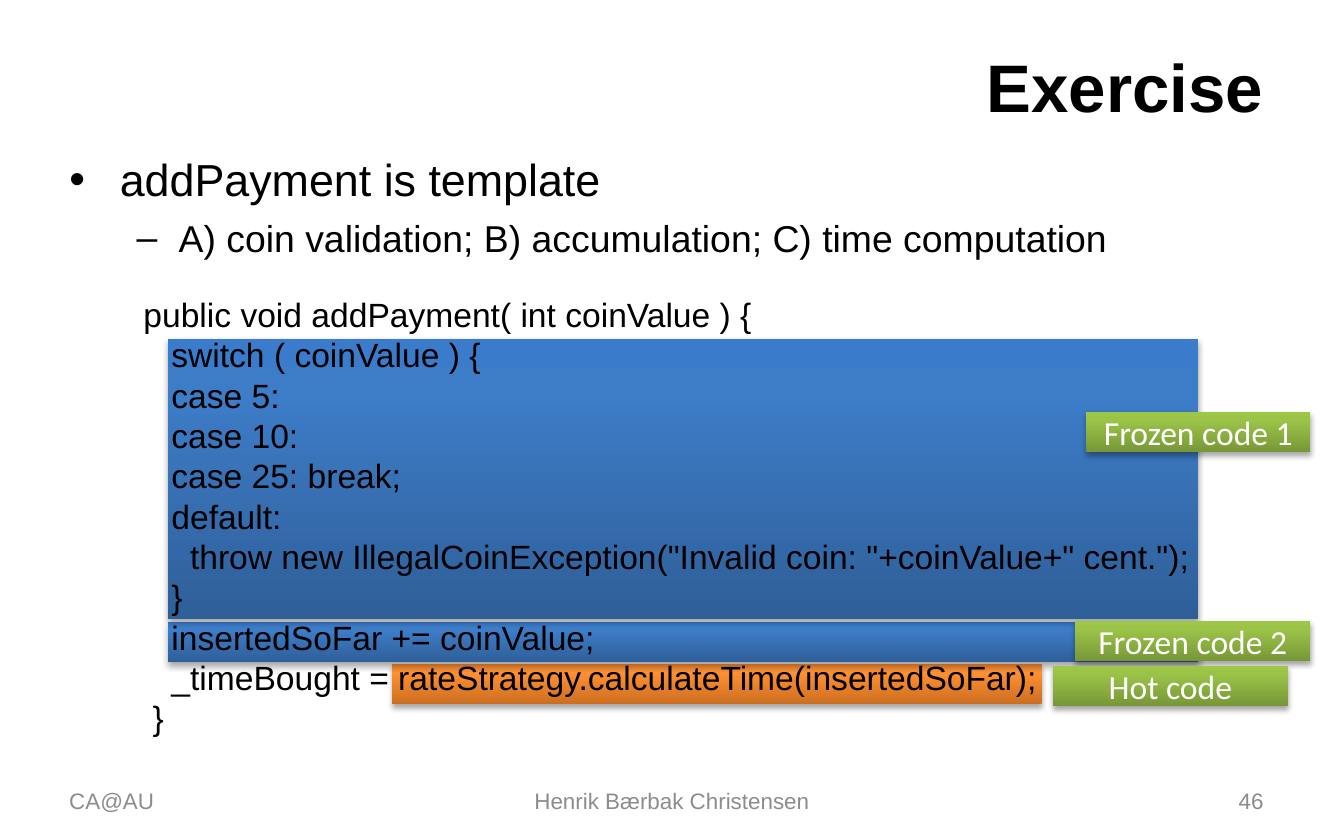
"""Build the exercise slide that marks frozen and hot code in addPayment."""
from copy import deepcopy
from dataclasses import dataclass
from typing import Any

from lxml.etree import SubElement
from pptx import Presentation
from pptx.dml.color import RGBColor
from pptx.enum.shapes import MSO_SHAPE as Shape
from pptx.enum.text import MSO_ANCHOR as Anchor, MSO_AUTO_SIZE as AutoSize, PP_ALIGN as Align
from pptx.oxml.ns import qn
from pptx.util import Pt

COLORS = {"text": "000000", "footer": "8C8C8C", "label": "FFFFFF", "shadow": "000000"}
GRADIENTS = {
    "frozen": ("2F5F99", "3D7CC7", "3A7CCB"),
    "hot": ("CC6E20", "FF9034", "FF9136"),
    "label": ("779737", "9BC348", "9DC746"),
}
STOPS = (0, 0.8, 1)
FORMATS = {
    "title": {"name": "Arial", "size": Pt(36), "bold": True},
    "bullet": {"name": "Arial", "size": Pt(24)},
    "subbullet": {"name": "Arial", "size": Pt(20)},
    "code": {"name": "Arial", "size": Pt(18)},
    "footer": {"name": "Arial", "size": Pt(12)},
    "label": {"name": "Calibri", "size": Pt(18)},
}
BAR_HEIGHT = 21.6
CODE = """ public void addPayment( int coinValue ) {
    switch ( coinValue ) {
    case 5:
    case 10:
    case 25: break;
    default:
      throw new IllegalCoinException("Invalid coin: "+coinValue+" cent.");
    }
    insertedSoFar += coinValue;
    _timeBought = rateStrategy.calculateTime(insertedSoFar);
  }"""


def set_values(target, values):
    for name, value in values.items():
        setattr(target, name, value)


@dataclass
class SlideBuilder:
    slide: Any

    def place(self, shape, box):
        set_values(shape, dict(zip(("left", "top", "width", "height"), map(Pt, box))))

    def format(self, paragraph, style, **layout):
        set_values(paragraph, layout)
        for run in paragraph.runs:
            set_values(run.font, FORMATS[style])
            run.font.color.rgb = RGBColor.from_string(COLORS.get(style, COLORS["text"]))

    def title(self, text, box):
        shape = self.slide.shapes.title
        self.place(shape, box)
        set_values(shape.text_frame, {"text": text, "vertical_anchor": Anchor.MIDDLE,
                                      "auto_size": AutoSize.NONE})
        self.format(shape.text_frame.paragraphs[0], "title", alignment=Align.RIGHT)

    def bullets(self, items, box):
        shape = self.slide.placeholders[1]
        self.place(shape, box)
        frame = shape.text_frame
        set_values(frame, {"text": "\n".join(text for text, *_ in items),
                           "auto_size": AutoSize.NONE, "margin_top": Pt(6.5)})
        for paragraph, (_, style, level, margin, hanging, before) in zip(frame.paragraphs, items):
            properties = paragraph._p.get_or_add_pPr()
            properties.set("marL", str(Pt(margin)))
            properties.set("indent", str(-Pt(hanging)))
            self.format(paragraph, style, level=level, space_before=Pt(before))

    def text(self, text, style, box, anchor=Anchor.TOP, **layout):
        shape = self.slide.shapes.add_textbox(*map(Pt, box))
        set_values(shape.text_frame, {"text": text, "word_wrap": True, "vertical_anchor": anchor})
        for paragraph in shape.text_frame.paragraphs:
            self.format(paragraph, style, **layout)

    def bar(self, gradient, box, text=""):
        shape = self.slide.shapes.add_shape(Shape.RECTANGLE, *map(Pt, box))
        self.gradient(shape, GRADIENTS[gradient])
        shape.line.fill.background()
        self.shadow(shape)
        if text:
            set_values(shape.text_frame, {"text": text, "word_wrap": True,
                                          "vertical_anchor": Anchor.MIDDLE})
            self.format(shape.text_frame.paragraphs[0], "label", alignment=Align.CENTER)

    def gradient(self, shape, colors):
        shape.fill.gradient()
        shape.fill.gradient_angle = 90
        stop_list = shape._element.spPr.find(".//" + qn("a:gsLst"))
        stop_list.append(deepcopy(stop_list[-1]))
        for stop, position, color in zip(shape.fill.gradient_stops, STOPS, colors):
            stop.position = position
            stop.color.rgb = RGBColor.from_string(color)

    def shadow(self, shape):
        shape.shadow.inherit = False
        effects = shape._element.spPr.find(qn("a:effectLst"))
        outer = SubElement(effects, qn("a:outerShdw"), blurRad=str(Pt(3.1)), dist=str(Pt(1.8)),
                           dir="5400000", rotWithShape="0")
        color = SubElement(outer, qn("a:srgbClr"), val=COLORS["shadow"])
        SubElement(color, qn("a:alpha"), val="35000")


def main():
    presentation = Presentation()
    set_values(presentation, {"slide_width": Pt(720), "slide_height": Pt(450)})
    builder = SlideBuilder(presentation.slides.add_slide(presentation.slide_layouts[1]))

    builder.title("Exercise", (36, 22.5, 648, 46.8))
    builder.bullets([
        ("addPayment is template", "bullet", 0, 27, 27, 0),
        ("A) coin validation; B) accumulation; C) time computation", "subbullet", 1, 58.5, 22.5, 5),
    ], (30, 75, 654, 340))

    builder.bar("hot", (210, 355.8, 348, BAR_HEIGHT))
    builder.bar("frozen", (90, 333.3, 552, BAR_HEIGHT))
    builder.bar("frozen", (90, 181.5, 552, 150))
    builder.text(CODE, "code", (64.8, 154, 585.4, 268.6), line_spacing=Pt(BAR_HEIGHT))

    for text, left, width, alignment in (
        ("CA@AU", 30, 168, Align.LEFT),
        ("Henrik Bærbak Christensen", 246, 228, Align.CENTER),
        ("46", 516, 168, Align.RIGHT),
    ):
        builder.text(text, "footer", (left, 417, width, 24), Anchor.MIDDLE, alignment=alignment)

    for text, left, top, width in (
        ("Frozen code 1", 582, 220.8, 120),
        ("Frozen code 2", 576, 332.7, 126),
        ("Hot code", 564, 356.7, 126),
    ):
        builder.bar("label", (left, top, width, BAR_HEIGHT), text)

    presentation.save("out.pptx")


if __name__ == "__main__":
    main()
